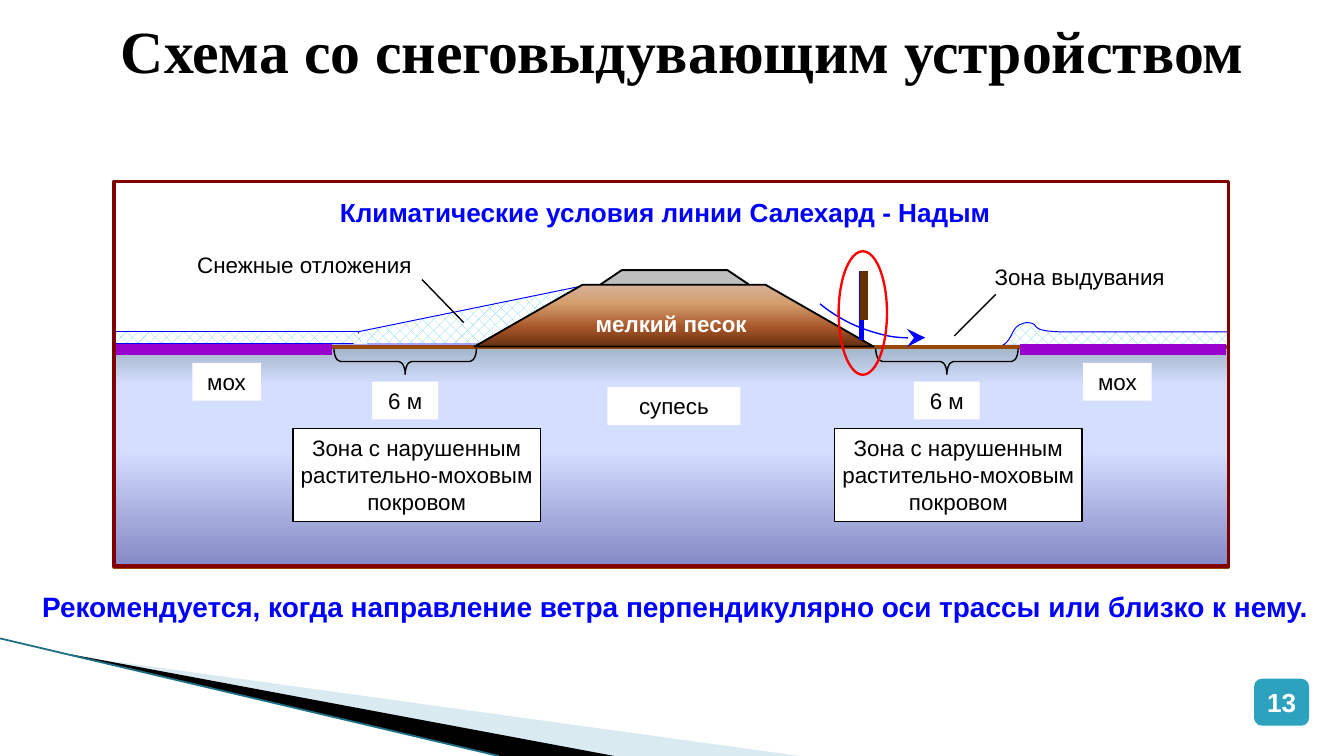
"""Build the slide with the snow-blowing device scheme for a railway embankment."""
from dataclasses import dataclass
from typing import NamedTuple, Optional, Union

from lxml.etree import SubElement
from pptx import Presentation
from pptx.dml.color import RGBColor
from pptx.enum.dml import MSO_PATTERN
from pptx.enum.shapes import MSO_CONNECTOR, MSO_SHAPE as SHAPE
from pptx.enum.text import MSO_ANCHOR as ANCHOR, PP_ALIGN as ALIGN
from pptx.oxml.ns import qn
from pptx.util import Pt

COLORS = {
    "black": "000000", "white": "FFFFFF", "blue": "0000FF", "red": "FF0000",
    "badge": "2DA2BF", "pale": "A0CBDC", "teal": "1F7086", "snow": "78D6EA",
    "gravel": "BFBFBF", "ground": "984807", "moss": "9900CC",
    "frame": "800000", "post": "663300",
    "soil low": "8488C4", "soil mid": "D4DEFF", "soil top": "A1B4C7",
    "sand 1": "D6B19C", "sand 2": "D49E6C", "sand 3": "A65528", "sand 4": "663012",
}
INSET = 2.88
ZONE_STEP = 290.2


class Point(NamedTuple):
    x: float
    y: float


class Stroke(NamedTuple):
    color: str
    width: float


class Gradient(NamedTuple):
    stops: tuple
    angle: int


class Pattern(NamedTuple):
    fore: str
    back: str


Fill = Optional[Union[str, Gradient, Pattern]]
SNOW = Pattern("snow", "white")
SNOW_EDGE = Stroke("blue", 0.5)
THIN = Stroke("black", 0.75)
SOIL = Gradient(((0, "soil low"), (53, "soil mid"), (83, "soil mid"), (100, "soil top")), 270)
SAND = Gradient(((0, "sand 1"), (30, "sand 2"), (70, "sand 3"), (100, "sand 4")), 90)


@dataclass
class Box:
    x: float
    y: float
    w: float
    h: float
    kind: SHAPE = SHAPE.RECTANGLE
    fill: Fill = None
    stroke: Optional[Stroke] = None
    adj: tuple = ()
    rot: float = 0


@dataclass
class Label:
    text: str
    size: float = 12
    color: str = "black"
    bold: bool = False
    align: ALIGN = ALIGN.CENTER
    anchor: ANCHOR = ANCHOR.TOP
    inset: Optional[float] = INSET


def rgb(name: str) -> RGBColor:
    return RGBColor.from_string(COLORS[name])


def paint(sp, fill: Fill, stroke: Optional[Stroke]) -> None:
    sp.shadow.inherit = False
    if fill is None:
        sp.fill.background()
    elif isinstance(fill, str):
        sp.fill.solid()
        sp.fill.fore_color.rgb = rgb(fill)
    elif isinstance(fill, Pattern):
        sp.fill.patterned()
        sp.fill.pattern = MSO_PATTERN.from_xml("pct40")
        sp.fill.fore_color.rgb, sp.fill.back_color.rgb = rgb(fill.fore), rgb(fill.back)
    else:
        sp.fill.gradient()
        grad = sp._element.spPr.find(qn("a:gradFill"))
        stops = grad.find(qn("a:gsLst"))
        for old in list(stops):
            stops.remove(old)
        for pos, name in fill.stops:
            stop = SubElement(stops, qn("a:gs"), pos=str(pos * 1000))
            SubElement(stop, qn("a:srgbClr"), val=COLORS[name])
        grad.find(qn("a:lin")).set("ang", str(fill.angle * 60000))
    if stroke:
        sp.line.color.rgb, sp.line.width = rgb(stroke.color), Pt(stroke.width)
    else:
        sp.line.fill.background()


def write(sp, label: Label) -> None:
    tf = sp.text_frame
    tf.word_wrap, tf.vertical_anchor = True, label.anchor
    if label.inset is not None:
        tf.margin_left = tf.margin_right = tf.margin_top = tf.margin_bottom = Pt(label.inset)
    p = tf.paragraphs[0]
    p.alignment = label.align
    r = p.add_run()
    r.text = label.text
    r.font.name, r.font.size, r.font.bold = "Arial", Pt(label.size), label.bold
    r.font.color.rgb = rgb(label.color)


def add_box(s, box: Box, label: Optional[Label] = None):
    sp = s.shapes.add_shape(box.kind, Pt(box.x), Pt(box.y), Pt(box.w), Pt(box.h))
    paint(sp, box.fill, box.stroke)
    sp.rotation = box.rot
    for i, value in enumerate(box.adj):
        sp.adjustments[i] = value
    if label:
        write(sp, label)
    return sp


def add_text(s, x: float, y: float, w: float, h: float, label: Label) -> None:
    write(s.shapes.add_textbox(Pt(x), Pt(y), Pt(w), Pt(h)), label)


def add_line(s, x1: float, y1: float, x2: float, y2: float, stroke: Stroke) -> None:
    ln = s.shapes.add_connector(MSO_CONNECTOR.STRAIGHT, Pt(x1), Pt(y1), Pt(x2), Pt(y2))
    ln.line.color.rgb, ln.line.width = rgb(stroke.color), Pt(stroke.width)
    SubElement(ln._element.spPr, qn("a:effectLst"))


def add_outline(s, points: list, fill: Fill, stroke: Optional[Stroke] = None):
    fb = s.shapes.build_freeform(Pt(points[0][0]), Pt(points[0][1]))
    fb.add_line_segments([(Pt(x), Pt(y)) for x, y in points[1:]], close=True)
    sp = fb.convert_to_shape()
    paint(sp, fill, stroke)
    return sp


def bezier(*ctrl: Point, steps: int = 12) -> list:
    weights = (1, 3, 3, 1)
    return [Point(*(sum(k * (1 - t) ** (3 - i) * t ** i * c[axis]
                        for i, (k, c) in enumerate(zip(weights, ctrl))) for axis in (0, 1)))
            for t in (n / steps for n in range(steps + 1))]


def draw_background(s) -> None:
    pale = add_outline(s, [(39.6, 351.4), (428.4, 405), (328.3, 405)], "pale")
    SubElement(pale._element.spPr.find(qn("a:solidFill"))[0], qn("a:alpha"), val="40000")
    add_outline(s, [(38.2, 350.6), (329, 405), (267.8, 405), (38.9, 351.4)], "black")
    add_line(s, 0, 342, 267.1, 405, Stroke("teal", 0.95))


def draw_section(s) -> None:
    start, crest, end = Point(537.1, 185), Point(550.1, 172.8), Point(567.4, 177.8)
    drift = bezier(start, Point(543.6, 181.4), Point(540.7, 174.2), crest)
    drift += bezier(crest, Point(558.7, 173.5), Point(549.4, 177.1), end)[1:]
    add_outline(s, drift + [(658.1, 177.8), (658.1, 185)], SNOW, SNOW_EDGE)
    add_box(s, Box(320.4, 144.7, 82.1, 8.6, SHAPE.TRAPEZOID, "gravel", Stroke("black", 1), (1.482,)))
    add_outline(s, [(290.2, 184.3), (311, 153.4), (159.8, 184.3)], SNOW, SNOW_EDGE)
    add_box(s, Box(61.9, 177.8, 130.3, 6.5, fill=SNOW, stroke=SNOW_EDGE))
    add_box(s, Box(189.4, 178.6, 7.2, 5.8, fill=SNOW))
    add_box(s, Box(61.2, 185.8, 596.9, 118.1, fill=SOIL, stroke=Stroke("ground", 2)))
    for x, left, right in ((103, 61.9, 177.8), (580.3, 546.5, 656.6)):
        add_box(s, Box(x, 194.4, 36.7, 20.2, fill="white"), Label("мох"))
        add_line(s, left, 187.2, right, 187.2, Stroke("moss", 6))
    add_box(s, Box(61.2, 97.2, 596.9, 205.9, stroke=Stroke("frame", 2)))
    add_box(s, Box(254.2, 152.6, 213.8, 33.1, SHAPE.TRAPEZOID, SAND, Stroke("black", 1), (1.747,)))


def draw_zones(s) -> None:
    for dx in (0, ZONE_STEP):
        add_box(s, Box(210.2 + dx, 155.5, 13.7, 76.3, SHAPE.RIGHT_BRACE, None, THIN, (0.252, 0.5), 90))
        add_box(s, Box(199.4 + dx, 204.5, 35.3, 20.2, fill="white"), Label("6 м"))
        add_box(s, Box(157 + dx, 229.7, 132.5, 49.7, fill="white", stroke=THIN),
                Label("Зона с нарушенным растительно-моховым покровом"))
    add_box(s, Box(325.4, 207.4, 71.3, 20.2, fill="white"), Label("супесь"))
    add_text(s, 311, 166.3, 97.2, 14.4, Label("мелкий песок", color="white", bold=True, inset=0))


def draw_blower(s) -> None:
    wind = add_box(s, Box(407.5, 28.8, 157.7, 150.5, SHAPE.ARC, None, Stroke("blue", 0.75),
                          (166.209, 193.557), 45.7))
    wind._element.spPr.find(qn("a:xfrm")).set("flipV", "1")
    SubElement(wind._element.spPr.find(qn("a:ln")), qn("a:tailEnd"), type="stealth", w="lg", len="lg")
    add_line(s, 461.5, 145.4, 461.5, 182.2, Stroke("blue", 2.25))
    add_line(s, 463, 145.4, 463, 171.4, Stroke("post", 4.5))
    add_text(s, 529.9, 138.2, 109.4, 20.2, Label("Зона выдувания", align=ALIGN.LEFT))
    add_line(s, 511.2, 180, 533.5, 157.7, THIN)
    add_text(s, 100.1, 131.8, 126, 20.2, Label("Снежные отложения"))
    add_line(s, 248.4, 172.8, 226.1, 149.8, THIN)
    add_box(s, Box(449.3, 134.6, 25.9, 66.2, SHAPE.OVAL, None, Stroke("red", 1.25)))


def draw_title(s) -> None:
    sp = s.shapes.title
    sp.left, sp.top, sp.width, sp.height = Pt(42.5), Pt(10.8), Pt(646.6), Pt(38.2)
    write(sp, Label("Схема со снеговыдувающим устройством", 32, bold=True,
                    anchor=ANCHOR.MIDDLE, inset=None))
    p = sp.text_frame.paragraphs[0]
    p.line_spacing = 0.8
    p.runs[0].font.name = "Times New Roman"


def main() -> None:
    prs = Presentation()
    prs.slide_width, prs.slide_height = Pt(720), Pt(405)
    s = prs.slides.add_slide(prs.slide_layouts[5])
    draw_background(s)
    draw_title(s)
    add_box(s, Box(115.9, 102.2, 481, 39.6, fill="white"),
            Label("Климатические условия линии Салехард - Надым", 14, "blue", True))
    add_box(s, Box(671.8, 363.6, 29.5, 25.2, SHAPE.ROUNDED_RECTANGLE, "badge"),
            Label("13", 14, "white", True, anchor=ANCHOR.MIDDLE))
    draw_section(s)
    draw_zones(s)
    draw_blower(s)
    add_text(s, 10.1, 312.5, 703.4, 25.2,
             Label("Рекомендуется, когда направление ветра перпендикулярно оси трассы или близко к нему.",
                   15, "blue", True, inset=None))
    prs.save("out.pptx")


if __name__ == "__main__":
    main()
